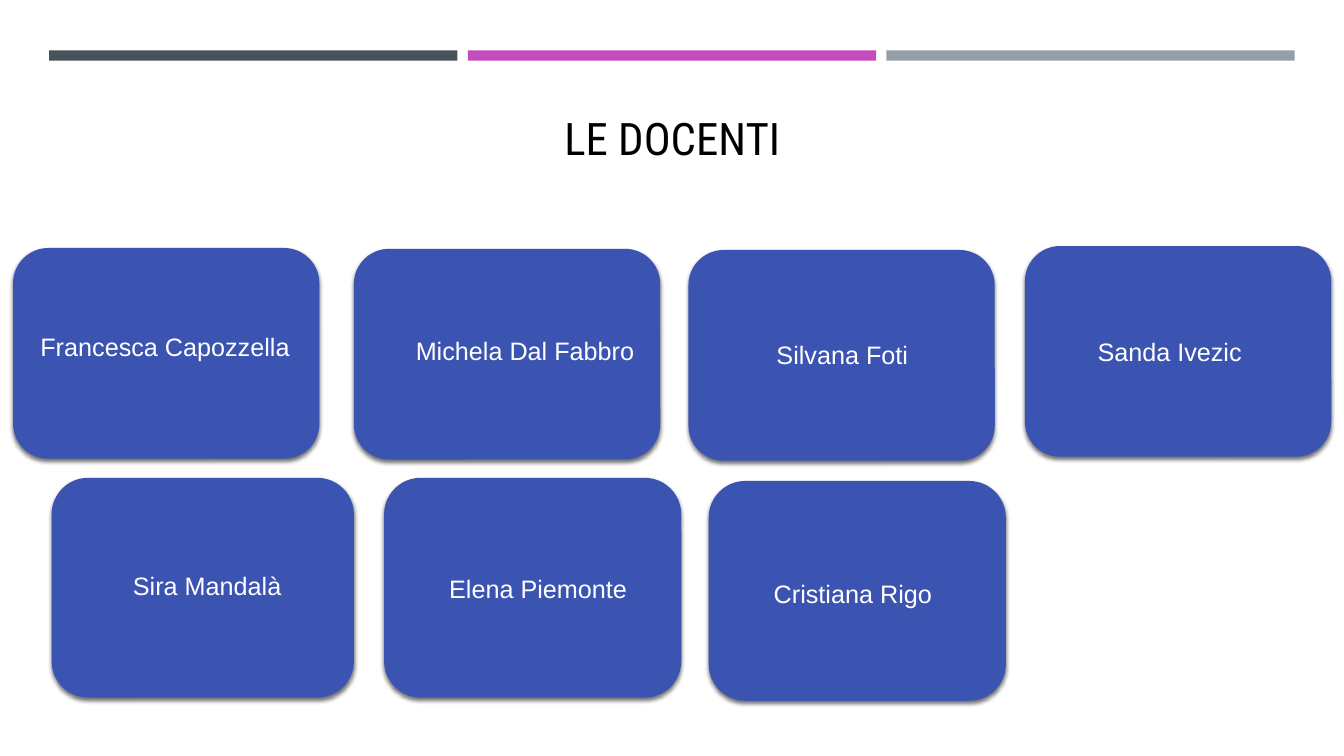
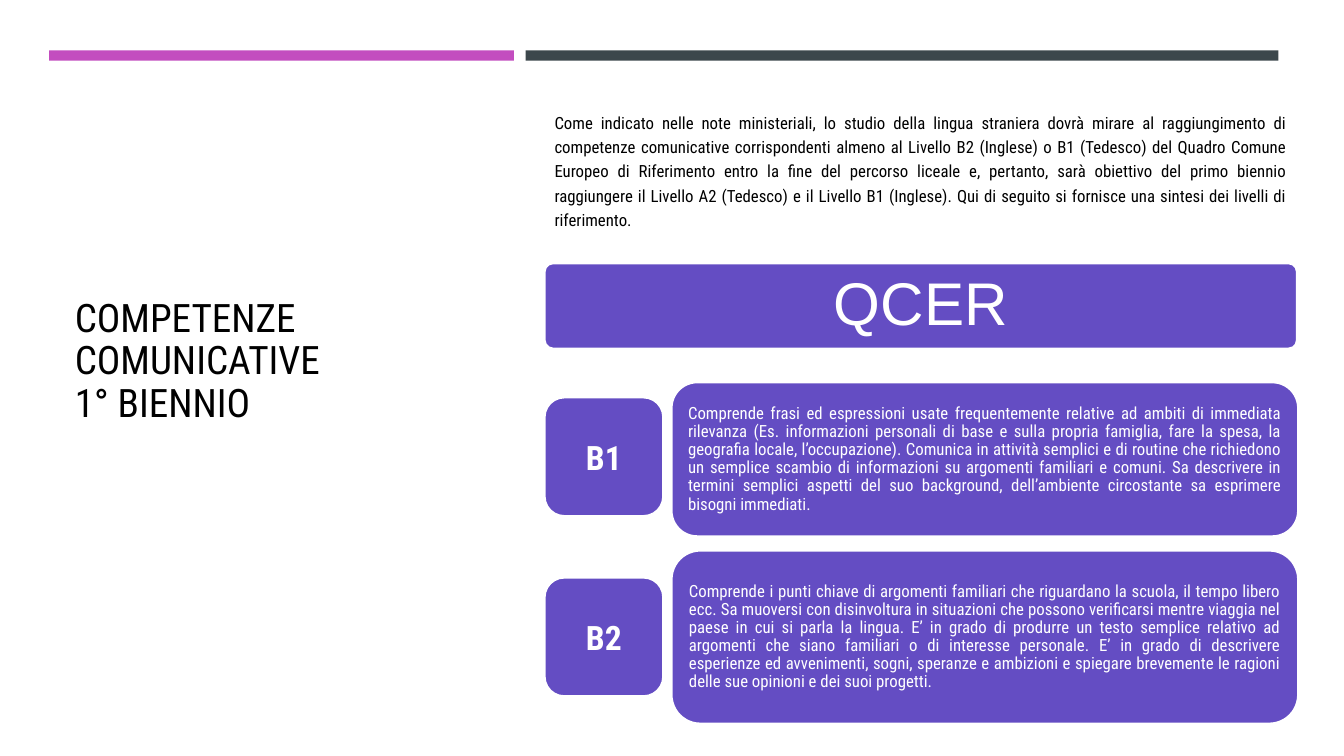
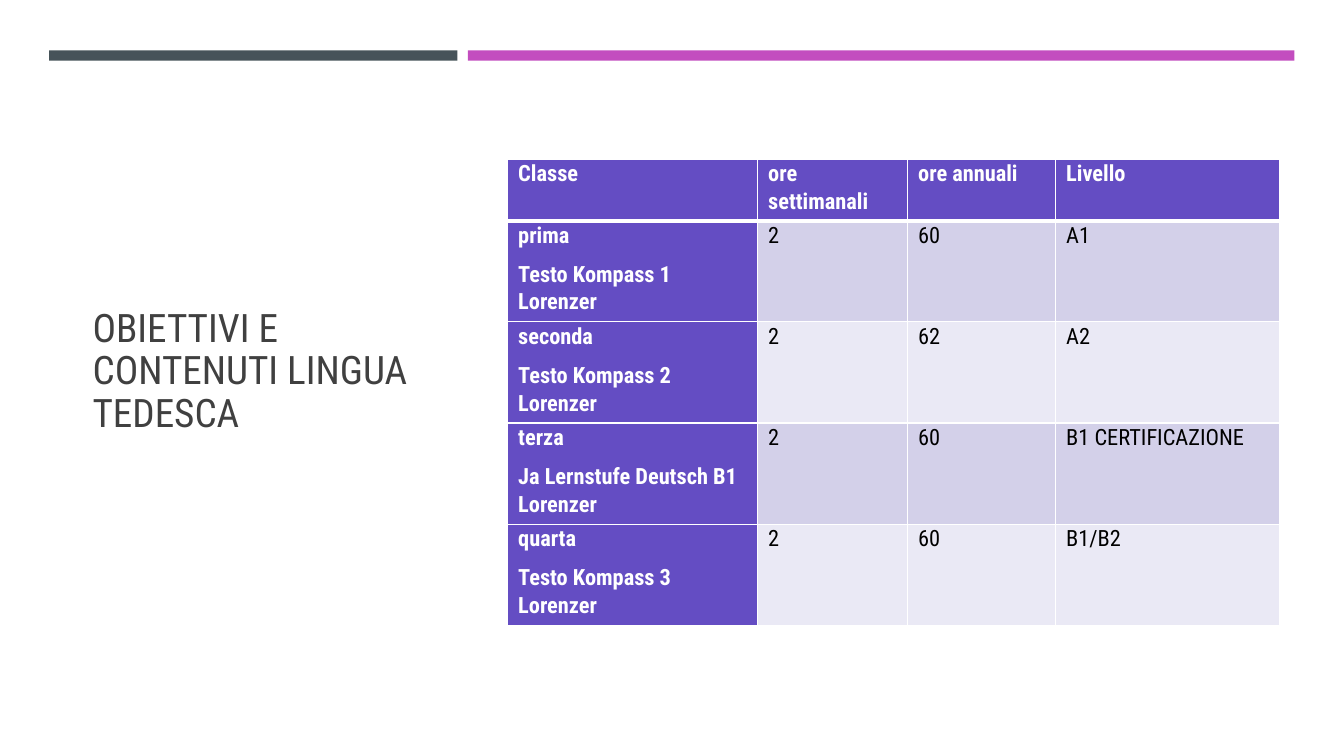
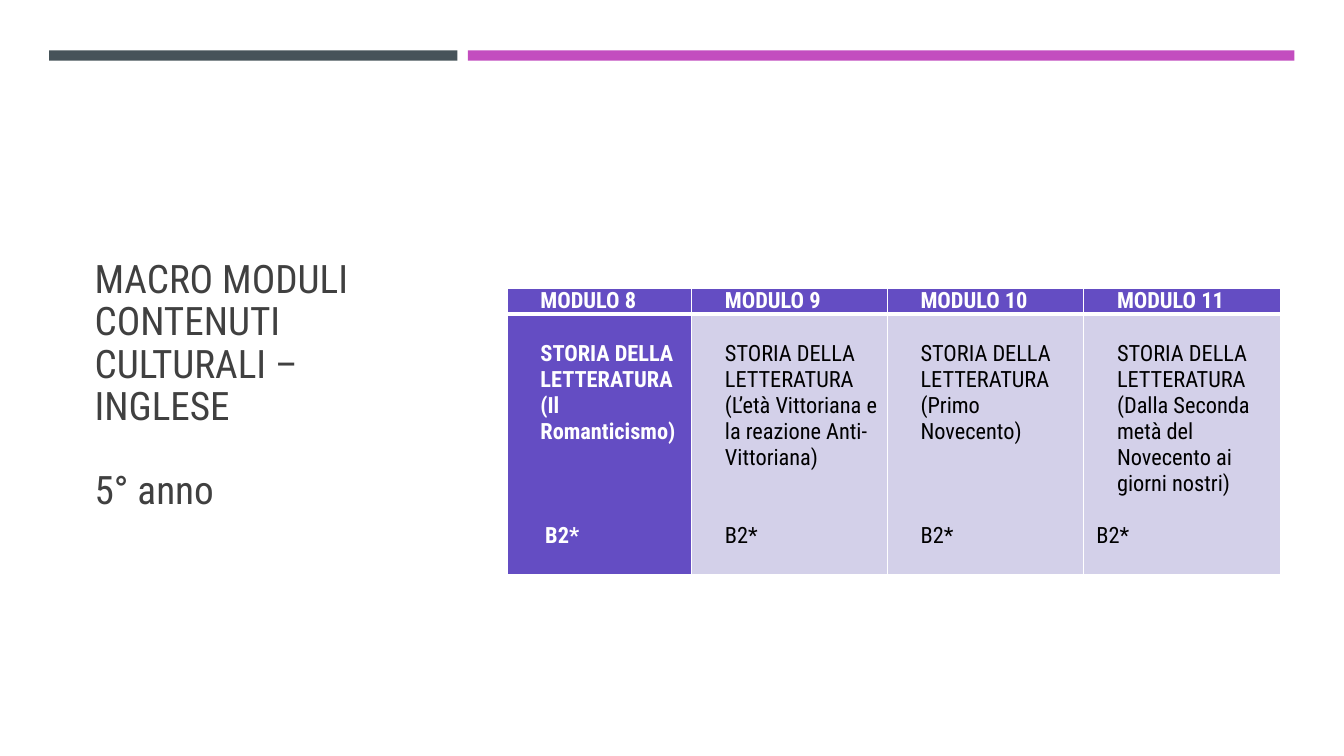
from lxml import etree
from pptx import Presentation
from pptx.dml.color import RGBColor
from pptx.enum.shapes import MSO_SHAPE as Shape
from pptx.enum.text import MSO_ANCHOR as Anchor, MSO_AUTO_SIZE as AutoSize, PP_ALIGN as Align
from pptx.oxml import parse_xml
from pptx.oxml.ns import nsdecls, qn
from pptx.util import Cm, Pt

FONT = "Roboto Condensed"
BLACK = RGBColor(0x00, 0x00, 0x00)
WHITE = RGBColor(0xFF, 0xFF, 0xFF)
CHARCOAL = RGBColor(0x40, 0x40, 0x40)
SLATE = RGBColor(0x46, 0x53, 0x59)
DARK_SLATE = RGBColor(0x3C, 0x47, 0x4C)
GREY = RGBColor(0x96, 0x9F, 0xA7)
MAGENTA = RGBColor(0xC3, 0x4D, 0xBF)
BLUE = RGBColor(0x3B, 0x54, 0xB1)
PURPLE = RGBColor(0x64, 0x4D, 0xC3)
LILAC = RGBColor(0xD3, 0xD0, 0xE9)
PALE_LILAC = RGBColor(0xEA, 0xE9, 0xF5)

TITLE_ONLY, TITLE_AND_BODY = 5, 1
TABLE_LEFT = 12.78

# name, left, top, width, height, left and top inset of the name
TEACHERS = [
    ("Francesca Capozzella", 0.33, 6.25, 7.72, 5.31, 0.43, 1.83),
    ("Michela Dal Fabbro", 8.92, 6.27, 7.72, 5.31, 1.3, 1.93),
    ("Silvana Foti", 17.35, 6.3, 7.72, 5.31, 1.96, 1.98),
    ("Sanda Ivezic", 25.83, 6.2, 7.72, 5.31, 1.57, 2.01),
    ("Sira Mandalà", 1.3, 12.04, 7.62, 5.54, 1.78, 2.06),
    ("Elena Piemonte", 9.68, 12.04, 7.49, 5.54, 1.37, 2.13),
    ("Cristiana Rigo", 17.86, 12.12, 7.49, 5.54, 1.37, 2.18),
]

INTRO = (
    "Come indicato nelle note ministeriali, lo studio della lingua straniera dovrà mirare al "
    "raggiungimento di competenze comunicative corrispondenti almeno al Livello B2 (Inglese) o "
    "B1 (Tedesco) del Quadro Comune Europeo di Riferimento entro la fine del percorso liceale e, "
    "pertanto, sarà obiettivo del primo biennio raggiungere il Livello A2 (Tedesco) e il Livello "
    "B1 (Inglese). Qui di seguito si fornisce una sintesi dei livelli di riferimento."
)

# level, tile top, panel top, panel height, description
LEVELS = [
    ("B1", 10.01, 9.63, 3.89,
     "Comprende frasi ed espressioni usate frequentemente relative ad ambiti di immediata "
     "rilevanza (Es. informazioni personali di base e sulla propria famiglia, fare la spesa, la "
     "geografia locale, l’occupazione). Comunica in attività semplici e di routine che richiedono "
     "un semplice scambio di informazioni su argomenti familiari e comuni. Sa descrivere in "
     "termini semplici aspetti del suo background, dell’ambiente circostante sa esprimere bisogni "
     "immediati."),
    ("B2", 14.55, 13.87, 4.37,
     "Comprende i punti chiave di argomenti familiari che riguardano la scuola, il tempo libero "
     "ecc. Sa muoversi con disinvoltura in situazioni che possono verificarsi mentre viaggia nel "
     "paese in cui si parla la lingua. E’ in grado di produrre un testo semplice relativo ad "
     "argomenti che siano familiari o di interesse personale. E’ in grado di descrivere esperienze "
     "ed avvenimenti, sogni, speranze e ambizioni e spiegare brevemente le ragioni delle sue "
     "opinioni e dei suoi progetti."),
]

GERMAN_COURSES = [
    ["Classe", "ore settimanali", "ore annuali", "Livello"],
    ["prima\nTesto Kompass 1 Lorenzer", "2", "60", "A1"],
    ["seconda\nTesto Kompass 2 Lorenzer", "2", "62", "A2"],
    ["terza\nJa Lernstufe Deutsch B1 Lorenzer", "2", "60", "B1 CERTIFICAZIONE"],
    ["quarta\nTesto Kompass 3 Lorenzer", "2", "60", "B1/B2"],
]

ENGLISH_MODULES = [
    ["MODULO 8", "MODULO 9", "MODULO 10", "MODULO 11"],
    ["STORIA DELLA LETTERATURA\n(Il Romanticismo)\nB2*",
     "STORIA DELLA LETTERATURA\n(L’età Vittoriana e la reazione Anti-Vittoriana)\nB2*",
     "STORIA DELLA LETTERATURA\n(Primo Novecento)\nB2*",
     "STORIA DELLA LETTERATURA\n(Dalla Seconda metà del Novecento ai giorni nostri)\nB2*"],
]
MODULE_INDENT = 0.64
LEVEL_INDENTS = [0.76, 0.64, 0.64, 0.12]
LEVEL_GAPS = [56, 37.5, 56, 18.75]


def format_text(tf, size, color, font=FONT, bold=False, align=Align.LEFT, spacing=1.0, after=0):
    for p in tf.paragraphs:
        p.alignment = align
        p.line_spacing = spacing
        p.space_before = Pt(0)
        p.space_after = Pt(after)
        for r in p.runs:
            r.font.name = font
            r.font.size = Pt(size)
            r.font.bold = bold
            r.font.color.rgb = color


def set_margins(target, left, top, right, bottom):
    target.margin_left, target.margin_top = Cm(left), Cm(top)
    target.margin_right, target.margin_bottom = Cm(right), Cm(bottom)


def set_indent(p, left):
    pPr = p._p.get_or_add_pPr()
    pPr.set("marL", str(Cm(left)))
    pPr.set("indent", "0")
    return pPr


def place(sp, left, top, width, height):
    sp.left, sp.top, sp.width, sp.height = Cm(left), Cm(top), Cm(width), Cm(height)


def fill_placeholder(sp, text, box, anchor):
    place(sp, *box)
    tf = sp.text_frame
    tf.text = text
    tf.word_wrap = True
    tf.auto_size = AutoSize.NONE
    tf.vertical_anchor = anchor
    return tf


def add_title(s, text, box, size=28, color=CHARCOAL, align=Align.LEFT, anchor=Anchor.MIDDLE):
    tf = fill_placeholder(s.shapes.title, text, box, anchor)
    format_text(tf, size, color, align=align, spacing=0.9)
    return tf


def add_body(s, text, box):
    tf = fill_placeholder(s.placeholders[1], text, box, Anchor.MIDDLE)
    format_text(tf, 12, BLACK, align=Align.JUSTIFY, spacing=1.2)
    for p in tf.paragraphs:
        etree.SubElement(set_indent(p, 0), qn("a:buNone"))


def add_block(s, kind, box, fill):
    sp = s.shapes.add_shape(kind, *map(Cm, box))
    sp.shadow.inherit = False
    sp.fill.solid()
    sp.fill.fore_color.rgb = fill
    sp.line.fill.background()
    return sp


def add_bands(s, bands, gap=0.26):
    """Lay (colour, width) bands side by side along the top."""
    left = 1.24
    for color, width in bands:
        add_block(s, Shape.RECTANGLE, (left, 1.27, width, 0.26), color)
        left += width + gap


def add_soft_shadow(sp):
    effects = sp._element.spPr.find(qn("a:effectLst"))
    effects.append(parse_xml(
        f'<a:outerShdw {nsdecls("a")} blurRad="{Pt(3)}" dist="{Pt(2)}" dir="5400000" '
        'algn="ctr" rotWithShape="0"><a:srgbClr val="000000"><a:alpha val="55000"/>'
        '</a:srgbClr></a:outerShdw>'))


def add_teacher(s, name, left, top, width, height, inset_left, inset_top):
    sp = add_block(s, Shape.ROUNDED_RECTANGLE, (left, top, width, height), BLUE)
    add_soft_shadow(sp)
    tf = sp.text_frame
    tf.text = name
    tf.word_wrap = True
    tf.vertical_anchor = Anchor.TOP
    set_margins(tf, inset_left, inset_top, 0, 0)
    format_text(tf, 18, WHITE, "Arial")


def add_panel(s, text, box, size, corner=0.167, margin=0.23, **style):
    sp = add_block(s, Shape.ROUNDED_RECTANGLE, box, PURPLE)
    sp.adjustments[0] = corner
    sp.line.color.rgb = WHITE
    sp.line.width = Pt(1.75)
    tf = sp.text_frame
    tf.text = text
    tf.word_wrap = True
    tf.vertical_anchor = Anchor.MIDDLE
    set_margins(tf, margin, margin, margin, margin)
    format_text(tf, size, WHITE, **style)


def set_borders(cell, top, bottom):
    tcPr = cell._tc.get_or_add_tcPr()
    for i, (side, width) in enumerate(zip("LRTB", (1, 1, top, bottom))):
        tcPr.insert(i, parse_xml(
            f'<a:ln{side} {nsdecls("a")} w="{Pt(width)}"><a:solidFill>'
            f'<a:srgbClr val="{WHITE}"/></a:solidFill></a:ln{side}>'))


def add_table(s, rows, top, widths, heights, margin, **style):
    """Add a table with a purple header row and first column over banded rows."""
    frame = s.shapes.add_table(len(rows), len(widths), Cm(TABLE_LEFT), Cm(top),
                               Cm(sum(widths)), Cm(sum(heights)))
    table = frame.table
    for column, width in zip(table.columns, widths):
        column.width = Cm(width)
    for i, (row, height) in enumerate(zip(rows, heights)):
        table.rows[i].height = Cm(height)
        for j, text in enumerate(row):
            cell = table.cell(i, j)
            heading = i == 0 or j == 0
            cell.text = text
            set_margins(cell, margin, 0, margin, 0)
            cell.fill.solid()
            cell.fill.fore_color.rgb = PURPLE if heading else (PALE_LILAC, LILAC)[i % 2]
            set_borders(cell, top=3 if i == 1 else 1, bottom=3 if i == 0 else 1)
            format_text(cell.text_frame, 16, WHITE if heading else BLACK, bold=heading, **style)
    return table


def new_slide(prs, layout):
    return prs.slides.add_slide(prs.slide_layouts[layout])


def teachers_slide(prs):
    s = new_slide(prs, TITLE_ONLY)
    add_bands(s, [(SLATE, 10.29), (MAGENTA, 10.29), (GREY, 10.29)])
    add_title(s, "LE DOCENTI", (1.63, 1.96, 30.63, 2.34), 32, BLACK, Align.CENTER, Anchor.BOTTOM)
    for teacher in TEACHERS:
        add_teacher(s, *teacher)


def skills_slide(prs):
    s = new_slide(prs, TITLE_AND_BODY)
    add_bands(s, [(MAGENTA, 11.71), (DARK_SLATE, 18.97)], gap=0.3)
    add_title(s, "COMPETENZE COMUNICATIVE\n1° BIENNIO", (1.63, 1.96, 11.66, 14.33), color=BLACK)
    add_body(s, INTRO, (13.72, 2.18, 18.97, 4.17))
    add_panel(s, "QCER", (13.72, 6.63, 18.97, 2.16), 43, corner=0.1, margin=0.15,
              font="Arial", align=Align.CENTER, spacing=0.9)
    for level, tile_top, panel_top, panel_height, description in LEVELS:
        add_panel(s, level, (13.72, tile_top, 3, 3), 24, margin=0, bold=True, align=Align.CENTER)
        add_panel(s, description, (16.92, panel_top, 15.8, panel_height), 12,
                  align=Align.JUSTIFY, spacing=0.9)


def german_slide(prs):
    s = new_slide(prs, TITLE_ONLY)
    add_bands(s, [(SLATE, 10.29), (MAGENTA, 20.83)])
    add_title(s, "OBIETTIVI E CONTENUTI LINGUA TEDESCA", (2.08, 2.84, 8.48, 13.08))
    add_table(s, GERMAN_COURSES, 4.01, [6.3, 3.78, 3.73, 5.66], [1.55] + [2.55] * 4,
              margin=0.28, spacing=1.07, after=8)


def english_slide(prs):
    s = new_slide(prs, TITLE_ONLY)
    add_bands(s, [(SLATE, 10.29), (MAGENTA, 20.83)])
    tf = add_title(s, "MACRO MODULI CONTENUTI CULTURALI – INGLESE\n5° anno",
                   (2.13, 3.2, 8.48, 13.08))
    tf.paragraphs[1].space_before = Pt(30)
    table = add_table(s, ENGLISH_MODULES, 7.26, [4.65, 4.93, 4.95, 4.95], [0.66, 6.55], margin=0.2)
    for cell in table.iter_cells():
        for p in cell.text_frame.paragraphs:
            set_indent(p, MODULE_INDENT)
    for j, (indent, gap) in enumerate(zip(LEVEL_INDENTS, LEVEL_GAPS)):
        cell = table.cell(1, j)
        cell.margin_top = Cm(0.66)
        level = cell.text_frame.paragraphs[-1]
        set_indent(level, indent)
        level.space_before = Pt(gap)


def main():
    prs = Presentation()
    prs.slide_width, prs.slide_height = Cm(33.87), Cm(19.05)
    teachers_slide(prs)
    skills_slide(prs)
    german_slide(prs)
    english_slide(prs)
    prs.save("out.pptx")


if __name__ == "__main__":
    main()
